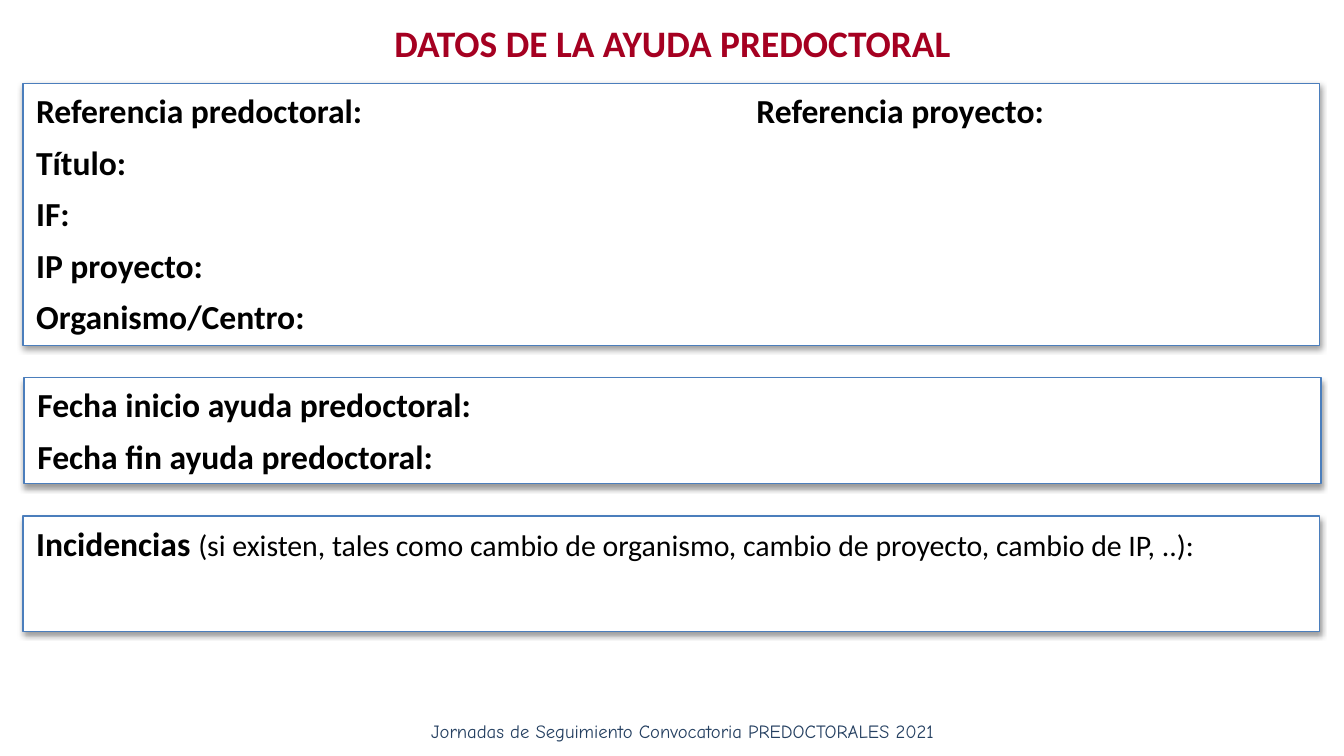
"""Build the predoctoral grant data slide with its three form panels."""
from dataclasses import dataclass

from lxml import etree
from pptx import Presentation
from pptx.dml.color import RGBColor
from pptx.enum import shapes, text
from pptx.oxml import ns
from pptx.util import Inches, Pt


@dataclass(frozen=True)
class Theme:
    font: str = "Calibri"
    footer_font: str = "Comic Neue"
    title: str = "A50021"
    body: str = "000000"
    footer: str = "254061"
    paper: str = "FFFFFF"
    border: str = "4B7EBC"
    title_size: int = 20
    label_size: int = 18
    note_size: int = 16
    footer_size: int = 10


@dataclass(frozen=True)
class Line:
    label: str
    note: str = ""


@dataclass(frozen=True)
class Panel:
    left: float
    top: float
    height: float
    lines: tuple[Line, ...]


THEME = Theme()
PANEL_WIDTH = 9.65
SECOND_COLUMN = 5.36
PANELS = (
    Panel(0.17, 0.62, 1.95, (
        Line("Referencia predoctoral:\tReferencia proyecto:"),
        Line("Título:"),
        Line("IF:"),
        Line("IP proyecto:"),
        Line("Organismo/Centro:"),
    )),
    Panel(0.18, 2.81, 0.79, (
        Line("Fecha inicio ayuda predoctoral:"),
        Line("Fecha fin ayuda predoctoral:"),
    )),
    Panel(0.17, 3.84, 0.86, (
        Line("Incidencias ",
             "(si existen, tales como cambio de organismo, cambio de proyecto, cambio de IP, ..):"),
    )),
)


def style(font, name: str, size: int, color: str, bold: bool) -> None:
    """Apply a typeface, size, colour and weight to a font."""
    font.name, font.size, font.bold = name, Pt(size), bold
    font.color.rgb = RGBColor.from_string(color)


def add_box(s, left: float, top: float, width: float, height: float):
    """Add a plain white rectangle with top-left text."""
    sp = s.shapes.add_shape(shapes.MSO_SHAPE.RECTANGLE,
                            *map(Inches, (left, top, width, height)))
    sp.shadow.inherit = False
    sp.fill.solid()
    sp.fill.fore_color.rgb = RGBColor.from_string(THEME.paper)
    sp.line.fill.background()
    tf = sp.text_frame
    tf.word_wrap = True
    tf.vertical_anchor = text.MSO_ANCHOR.TOP
    tf.paragraphs[0].alignment = text.PP_ALIGN.LEFT
    return sp


def add_shadow(sp) -> None:
    """Give a shape a soft shadow that falls straight down."""
    effects = sp._element.spPr.find(ns.qn("a:effectLst"))
    shadow = etree.SubElement(effects, ns.qn("a:outerShdw"), blurRad=str(Pt(3.1)),
                              dist=str(Pt(1.6)), dir="5400000", rotWithShape="0")
    color = etree.SubElement(shadow, ns.qn("a:srgbClr"), val="000000")
    etree.SubElement(color, ns.qn("a:alpha"), val="38000")


def add_tab(p, position: float) -> None:
    """Set a left tab stop on a paragraph."""
    tabs = etree.SubElement(p._p.get_or_add_pPr(), ns.qn("a:tabLst"))
    etree.SubElement(tabs, ns.qn("a:tab"), pos=str(Inches(position)), algn="l")


def add_panel(s, panel: Panel) -> None:
    """Draw a bordered panel with its form labels."""
    sp = add_box(s, panel.left, panel.top, PANEL_WIDTH, panel.height)
    sp.line.color.rgb = RGBColor.from_string(THEME.border)
    sp.line.width = Pt(0.75)
    add_shadow(sp)
    tf = sp.text_frame
    for i, line in enumerate(panel.lines):
        p = tf.add_paragraph() if i else tf.paragraphs[0]
        p.alignment = text.PP_ALIGN.LEFT
        if i:
            p.space_before = Pt(6)
        if "\t" in line.label:
            add_tab(p, SECOND_COLUMN)
        style(p.font, THEME.font, THEME.label_size, THEME.body, True)
        p.add_run().text = line.label
        if line.note:
            r = p.add_run()
            r.text = line.note
            r.font.size, r.font.bold = Pt(THEME.note_size), False


def add_title(s, title: str) -> None:
    """Place and format the slide title."""
    sp = s.shapes.title
    sp.left, sp.top, sp.width, sp.height = map(Inches, (1.57, 0.1, 6.87, 0.44))
    tf = sp.text_frame
    tf.text = title
    tf.word_wrap = True
    tf.auto_size = text.MSO_AUTO_SIZE.NONE
    tf.vertical_anchor = text.MSO_ANCHOR.TOP
    p = tf.paragraphs[0]
    p.alignment = text.PP_ALIGN.CENTER
    style(p.font, THEME.font, THEME.title_size, THEME.title, True)


def add_footer(s, footer: str) -> None:
    """Add the event name at the foot of the slide."""
    p = add_box(s, 3.11, 5.31, 4.49, 0.27).text_frame.paragraphs[0]
    p.add_run().text = footer
    style(p.font, THEME.footer_font, THEME.footer_size, THEME.footer, False)


def main() -> None:
    """Create and save the presentation."""
    prs = Presentation()
    prs.slide_width = Inches(10)
    prs.slide_height = prs.slide_width * 9 // 16
    s = prs.slides.add_slide(prs.slide_layouts[5])
    add_title(s, "DATOS DE LA AYUDA PREDOCTORAL")
    add_footer(s, "Jornadas de Seguimiento Convocatoria PREDOCTORALES 2021")
    for panel in PANELS:
        add_panel(s, panel)
    prs.save("out.pptx")


if __name__ == "__main__":
    main()
